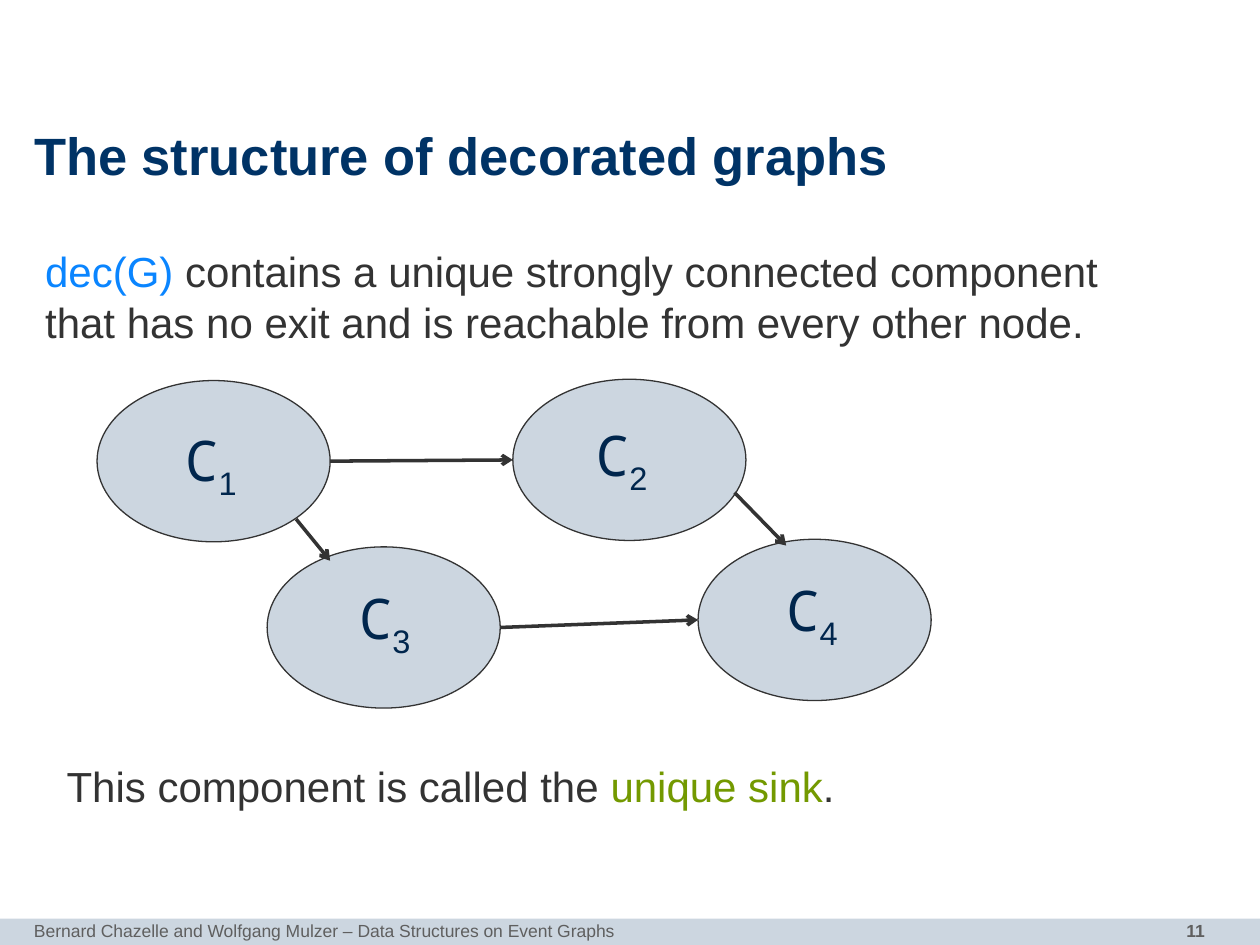
from lxml.etree import SubElement
from pptx import Presentation
from pptx.dml.color import RGBColor
from pptx.enum.shapes import MSO_CONNECTOR as Connector, MSO_SHAPE as Shape
from pptx.enum.text import MSO_ANCHOR as Anchor, PP_ALIGN as Align
from pptx.oxml.ns import qn
from pptx.util import Inches, Pt

WIDTH, HEIGHT = 10, 7.5
NAVY, DEEP_NAVY, PALE = "003366", "00264D", "CCD6E0"
DARK, GREY, BLUE, GREEN = "333333", "5F5F5F", "0A85FF", "739900"
NODE_WIDTH, NODE_HEIGHT = 1.85, 1.28
LABEL_WIDTH, LABEL_HEIGHT = 0.67, 0.64

# Component number: (left, top) of its ellipse, (left, top) of its label
COMPONENTS = {
    1: ((0.77, 3.02), (1.37, 3.33)),
    3: ((2.12, 4.34), (2.75, 4.58)),
    2: ((4.07, 3.01), (4.63, 3.29)),
    4: ((5.54, 4.28), (6.14, 4.52)),
}
SIDE_EDGES = [(1, 2), (3, 4)]
DIAGONAL_EDGES = [((2.35, 4.12), (2.62, 4.45)), ((5.83, 3.91), (6.24, 4.33))]


def colour(value):
    return RGBColor.from_string(value)


def inches(*lengths):
    return [Inches(length) for length in lengths]


def add_text(page, area, spans, size, bold=False, align=Align.LEFT,
             anchor=Anchor.TOP, insets=(0.1, 0.05)):
    """Write one paragraph; each span is (text, colour, font name)."""
    box = page.shapes.add_textbox(*inches(*area))
    frame = box.text_frame
    frame.word_wrap = True
    frame.vertical_anchor = anchor
    frame.margin_left = frame.margin_right = Inches(insets[0])
    frame.margin_top = frame.margin_bottom = Inches(insets[1])
    para = frame.paragraphs[0]
    para.alignment = align
    for text, shade, font_name in spans:
        span = para.add_run()
        span.text = text
        span.font.name = font_name
        span.font.size = Pt(size)
        span.font.bold = bold
        span.font.color.rgb = colour(shade)
    return para


def add_filled(page, kind, area, outline=None):
    shape = page.shapes.add_shape(kind, *inches(*area))
    shape.shadow.inherit = False
    shape.fill.solid()
    shape.fill.fore_color.rgb = colour(PALE)
    if outline:
        shape.line.color.rgb = colour(outline)
        shape.line.width = Pt(0.75)
    else:
        shape.line.fill.background()


def add_arrow(page, start, end):
    arrow = page.shapes.add_connector(Connector.STRAIGHT, *inches(*start, *end))
    arrow.line.color.rgb = colour(DARK)
    arrow.line.width = Pt(2)
    SubElement(arrow.line._get_or_add_ln(), qn("a:tailEnd"), type="arrow")
    SubElement(arrow._element.spPr, qn("a:effectLst"))


def add_label(page, number, corner):
    para = add_text(page, (*corner, LABEL_WIDTH, LABEL_HEIGHT),
                    [("C", DEEP_NAVY, "Noto Sans Mono"),
                     (str(number), DEEP_NAVY, "Arial")], 32)
    para.runs[1].font._element.set("baseline", "-25000")


def side_point(number, share):
    """Point at mid-height of an ellipse: share 0 is left, 1 is right."""
    left, top = COMPONENTS[number][0]
    return left + share * NODE_WIDTH, top + NODE_HEIGHT / 2


def main():
    deck = Presentation()
    deck.slide_width, deck.slide_height = inches(WIDTH, HEIGHT)
    page = deck.slides.add_slide(deck.slide_layouts[6])

    # Footer
    add_filled(page, Shape.RECTANGLE, (0, HEIGHT - 0.21, WIDTH, 0.21))
    add_text(page, (8.32, 7.25, 1.34, 0.26), [("11", GREY, "Arial")], 10,
             bold=True, align=Align.RIGHT)
    footer = "Bernard Chazelle and Wolfgang Mulzer – Data Structures on Event Graphs"
    add_text(page, (0.27, 7.25, 6.87, 0.25), [(footer, GREY, "Arial")], 10,
             insets=(0, 0.05))

    # Title and statements
    title = add_text(page, (0.27, 1.03, 9.45, 0.47),
                     [("The structure of decorated graphs", NAVY, "Arial")], 30,
                     bold=True, anchor=Anchor.MIDDLE, insets=(0, 0))
    title.line_spacing = 0.85
    add_text(page, (0.26, 1.9, 8.79, 0.91), [
        ("dec(G)", BLUE, "Arial"),
        (" contains a unique strongly connected component that has no exit "
         "and is reachable from every other node.", DARK, "Arial")], 24)
    add_text(page, (0.43, 5.99, 8.79, 0.5), [
        ("This component is called the ", DARK, "Arial"),
        ("unique sink", GREEN, "Arial"),
        (".", DARK, "Arial")], 24)

    # Graph of components
    for corner, _ in COMPONENTS.values():
        add_filled(page, Shape.OVAL, (*corner, NODE_WIDTH, NODE_HEIGHT), DARK)
    for source, target in SIDE_EDGES:
        add_arrow(page, side_point(source, 1), side_point(target, 0))
    for start, end in DIAGONAL_EDGES:
        add_arrow(page, start, end)
    for number, (_, corner) in COMPONENTS.items():
        add_label(page, number, corner)

    deck.save("out.pptx")


if __name__ == "__main__":
    main()
